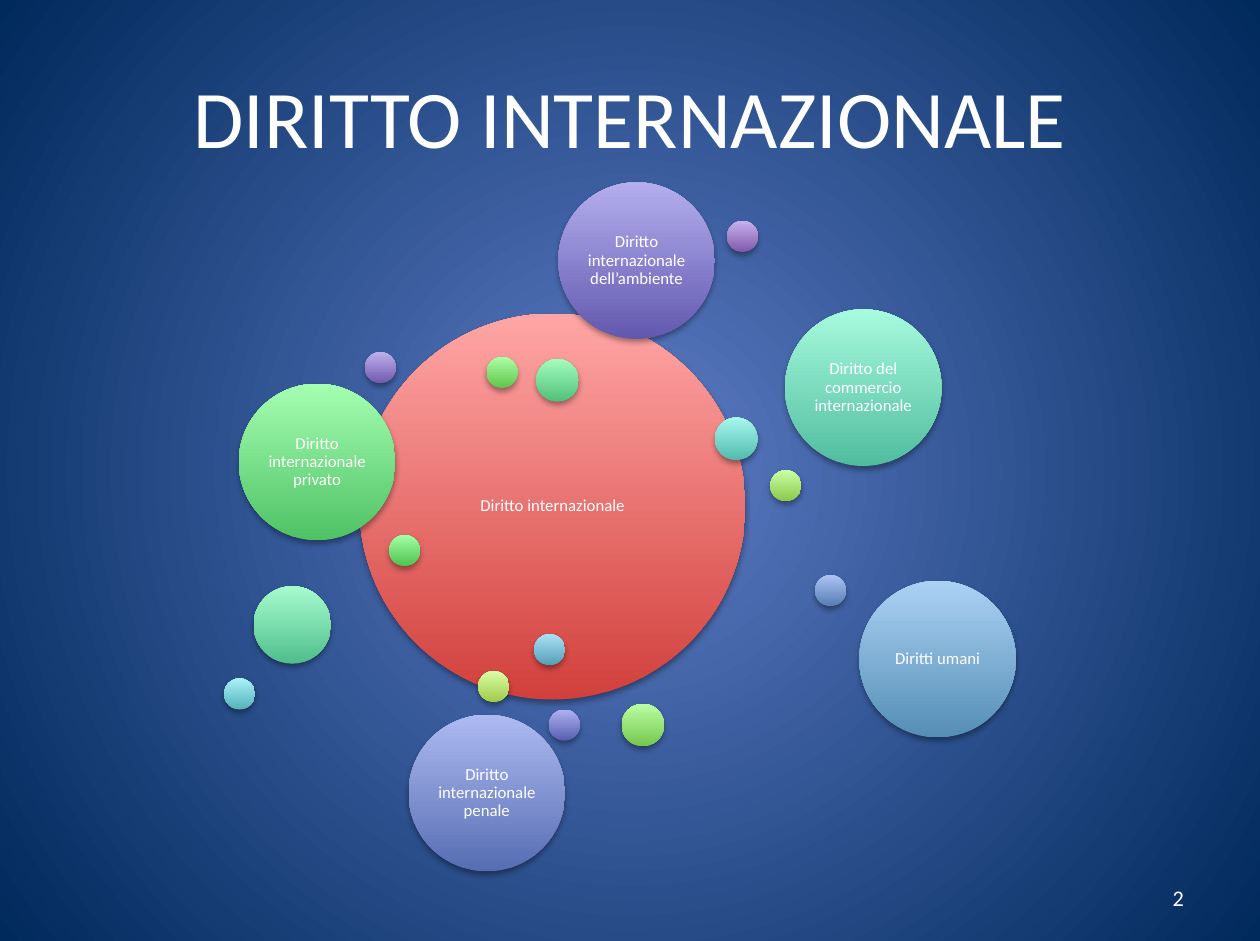
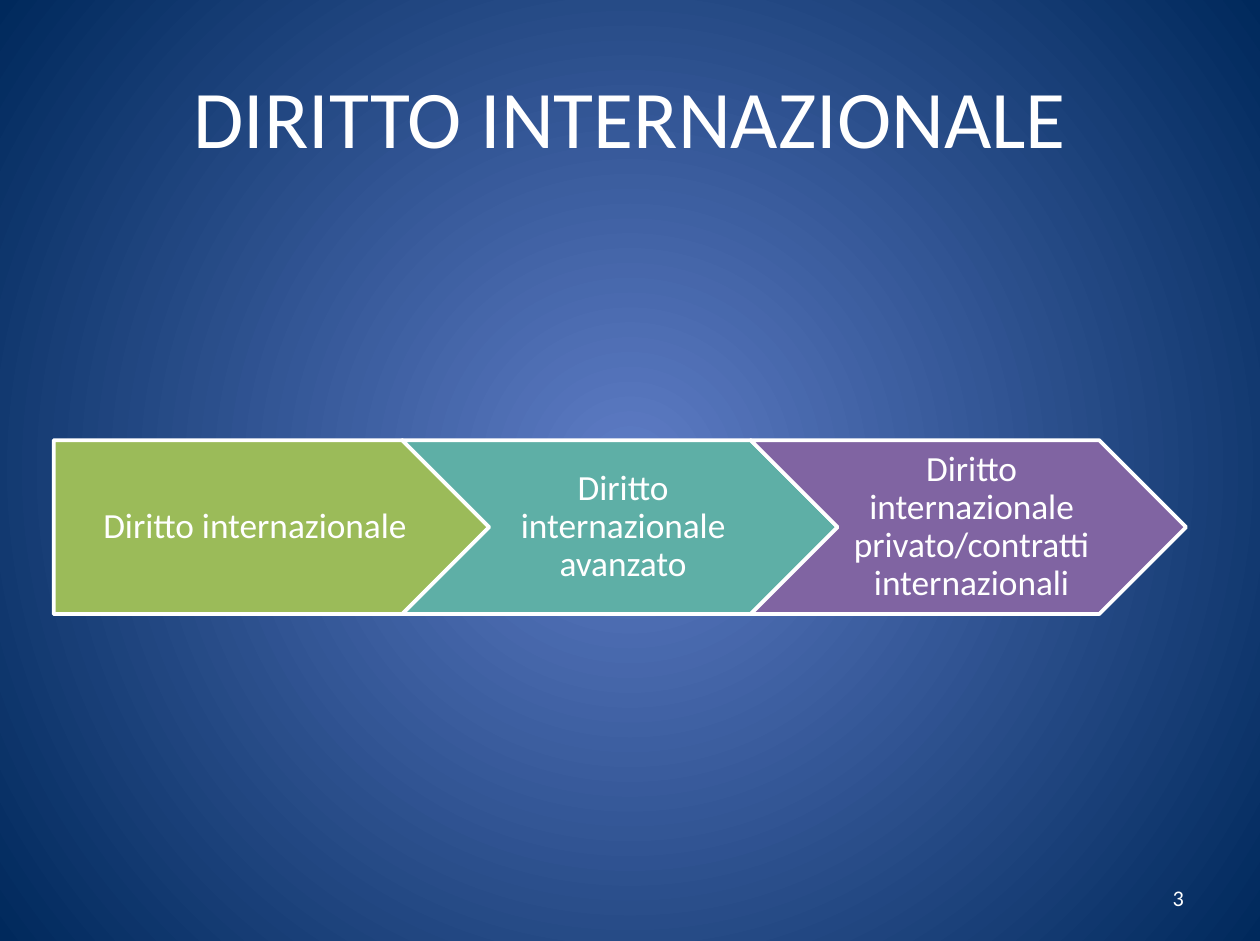
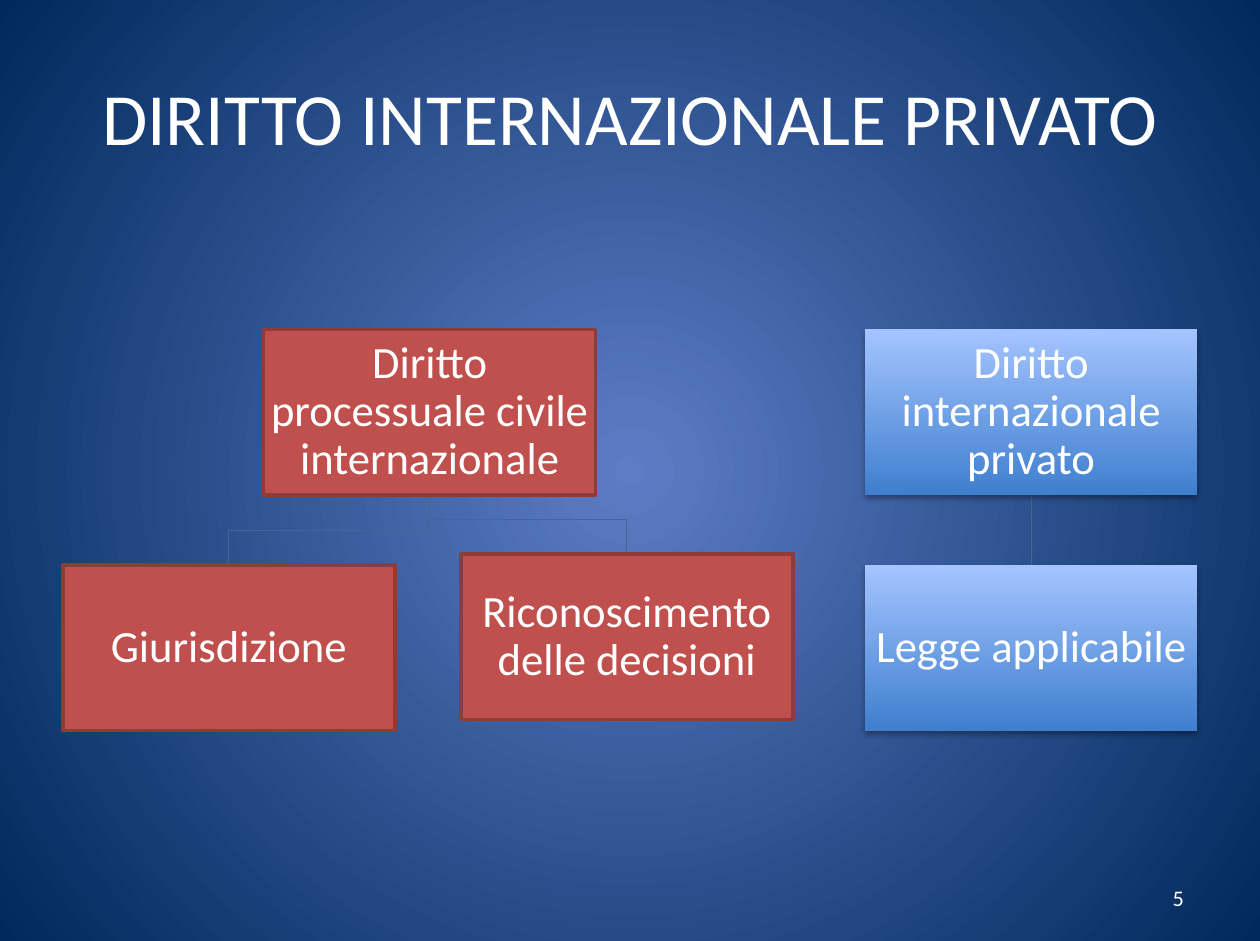
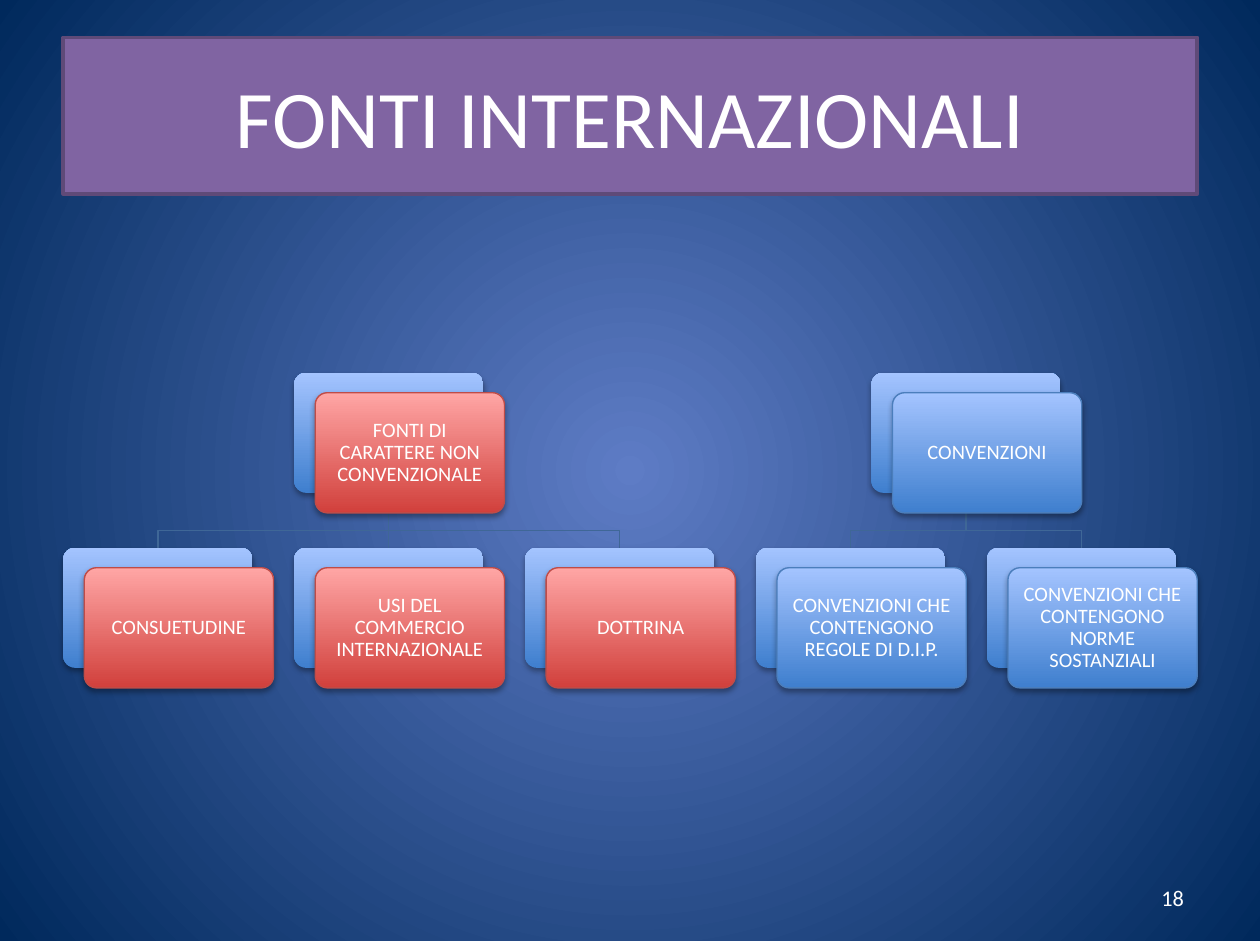
from lxml import etree
from pptx import Presentation
from pptx.dml.color import RGBColor
from pptx.enum.shapes import MSO_CONNECTOR, MSO_SHAPE
from pptx.enum.text import MSO_ANCHOR, MSO_AUTO_SIZE, PP_ALIGN
from pptx.oxml import parse_xml
from pptx.oxml.ns import nsdecls, qn
from pptx.util import Cm, Pt

FONT = "Calibri"
WHITE = RGBColor(0xFF, 0xFF, 0xFF)
GLOW = RGBColor(0x5E, 0x7C, 0xC5)
NAVY = RGBColor(0x00, 0x29, 0x5C)
BRANCH = RGBColor(0x3F, 0x67, 0x97)
GREEN = RGBColor(0x9B, 0xBB, 0x59)
TEAL = RGBColor(0x5E, 0xAF, 0xA6)
PURPLE = RGBColor(0x80, 0x64, 0xA2)
PURPLE_EDGE = RGBColor(0x5F, 0x4A, 0x78)
BRICK = RGBColor(0xC0, 0x50, 0x4D)
BRICK_EDGE = RGBColor(0x8E, 0x3B, 0x39)
RED_EDGE = RGBColor(0xBF, 0x4C, 0x48)
BLUE_EDGE = RGBColor(0x4B, 0x7E, 0xBC)


def gradient(dark, light):
    return RGBColor.from_string(dark), RGBColor.from_string(light)


RED_GRADIENT = gradient("D1403C", "FFA6A5")
BLUE_GRADIENT = gradient("3F7FCE", "A4C4FF")

SMALL, MEDIUM, LARGER, LARGE, MAIN = 0.59, 0.81, 1.47, 2.97, 7.32
# left, top, diameter, colours, label
BUBBLES = [
    (6.82, 5.95, MAIN, RED_GRADIENT, "Diritto internazionale"),
    (9.07, 12.73, SMALL, gradient("A0CA4A", "DAFFA5"), ""),
    (14.61, 8.92, SMALL, gradient("8AC84B", "CAFFA5"), ""),
    (11.79, 13.35, MEDIUM, gradient("74C64C", "BBFFA4"), ""),
    (9.23, 6.77, SMALL, gradient("5FC54D", "ADFFA4"), ""),
    (7.38, 10.15, SMALL, gradient("4EC350", "A4FFA5"), ""),
    (4.53, 7.28, LARGE, gradient("4FC265", "A4FEB1"),
     "Diritto internazionale privato"),
    (10.17, 6.81, MEDIUM, gradient("4FC079", "A5FCBE"), ""),
    (4.81, 11.12, LARGER, gradient("50BE8C", "A6FBCD"), ""),
    (14.89, 5.87, LARGE, gradient("51BD9E", "A7FADD"),
     "Diritto del commercio internazionale"),
    (13.56, 7.92, MEDIUM, gradient("52BBAF", "A8F8ED"), ""),
    (4.25, 12.87, SMALL, gradient("53B3B9", "A9F1F7"), ""),
    (10.13, 12.03, SMALL, gradient("54A0B7", "AAE0F6"), ""),
    (16.3, 11.02, LARGE, gradient("558EB6", "ABD1F4"), "Diritti umani"),
    (15.46, 10.91, SMALL, gradient("567DB4", "ACC4F3"), ""),
    (7.75, 13.56, LARGE, gradient("576DB2", "ADBAF2"),
     "Diritto internazionale penale"),
    (10.41, 13.46, SMALL, gradient("585EB1", "AEB1F1"), ""),
    (10.59, 3.46, LARGE, gradient("6259AF", "B4AEEF"),
     "Diritto internazionale dell’ambiente"),
    (6.92, 6.68, SMALL, gradient("715AAD", "BDAFEE"), ""),
    (13.79, 4.19, SMALL, gradient("7F5BAB", "C8B0ED"), ""),
]


def set_attributes(target, values):
    for name, value in values.items():
        setattr(target, name, value)


def set_gradient(fill, colours):
    fill.gradient()
    for stop, colour in zip(fill.gradient_stops, colours):
        stop.color.rgb = colour


def set_background(master):
    """Give every slide a round glow that darkens towards the corners."""
    set_gradient(master.background.fill, (GLOW, NAVY))
    linear = next(master.element.iter(qn("a:lin")))
    linear.getparent().replace(linear, parse_xml(
        f'<a:path {nsdecls("a")} path="circle"><a:fillToRect l="50000" '
        't="50000" r="50000" b="50000"/></a:path>'))


def set_shadow(shape):
    effects = shape.element.spPr.find(qn("a:effectLst"))
    effects.append(parse_xml(
        f'<a:outerShdw {nsdecls("a")} blurRad="{Pt(3.1)}" dist="{Pt(1.8)}" '
        'dir="5400000" rotWithShape="0"><a:srgbClr val="000000">'
        '<a:alpha val="35000"/></a:srgbClr></a:outerShdw>'))


def set_line(shape, colour, width):
    shape.line.width = Pt(width)
    shape.line.color.rgb = colour


def write_text(shape, text, size, align=PP_ALIGN.CENTER, spacing=0.9, insets=None):
    """Write one white paragraph; insets are left, top, right, bottom in cm."""
    frame = shape.text_frame
    set_attributes(frame, {"word_wrap": True, "auto_size": MSO_AUTO_SIZE.NONE,
                           "vertical_anchor": MSO_ANCHOR.MIDDLE})
    if insets:
        sides = ("left", "top", "right", "bottom")
        set_attributes(frame, {f"margin_{side}": Cm(inset)
                               for side, inset in zip(sides, insets)})
    frame.text = text
    paragraph = frame.paragraphs[0]
    set_attributes(paragraph, {"alignment": align, "line_spacing": spacing})
    font = paragraph.runs[0].font
    set_attributes(font, {"name": FONT, "size": Pt(size)})
    font.color.rgb = WHITE


def add_box(slide, kind, place, fill, edge=None, edge_width=2.0):
    """Add a shape; a pair of colours as fill gives a gradient with a shadow."""
    shape = slide.shapes.add_shape(kind, *map(Cm, place))
    shape.shadow.inherit = False
    if isinstance(fill, RGBColor):
        shape.fill.solid()
        shape.fill.fore_color.rgb = fill
    else:
        set_gradient(shape.fill, fill)
        shape.fill.gradient_angle = 90
        set_shadow(shape)
    if edge is None:
        shape.line.fill.background()
    else:
        set_line(shape, edge, edge_width)
    return shape


def add_branch(slide, start, end, bend_gap):
    """Join parent to child, turning bend_gap above the child."""
    (x1, y1), (x2, y2) = start, end
    if x1 == x2:
        branch = slide.shapes.add_connector(
            MSO_CONNECTOR.STRAIGHT, *map(Cm, (x1, y1, x2, y2)))
        etree.SubElement(branch.element.spPr, qn("a:effectLst"))
    else:
        bend = y2 - bend_gap
        builder = slide.shapes.build_freeform(Cm(x1), Cm(y1))
        builder.add_line_segments(
            [(Cm(x), Cm(y)) for x, y in ((x1, bend), (x2, bend), (x2, y2))],
            close=False)
        branch = builder.convert_to_shape()
        branch.shadow.inherit = False
        branch.fill.background()
    set_line(branch, BRANCH, 0.75)


def add_titled_slide(presentation, title_text, number, title_size=44):
    slide = presentation.slides.add_slide(presentation.slide_layouts[5])
    title = slide.shapes.title
    set_attributes(title, {"left": Cm(1.2), "top": Cm(0.71),
                           "width": Cm(21.51), "height": Cm(2.97)})
    write_text(title, title_text, title_size, spacing=1.0)
    number_box = slide.shapes.add_textbox(Cm(17.12), Cm(16.55), Cm(5.59), Cm(0.94))
    write_text(number_box, str(number), 12, PP_ALIGN.RIGHT, 1.0)
    return slide


def build_bubbles(presentation):
    slide = add_titled_slide(presentation, "DIRITTO INTERNAZIONALE", 2)
    for left, top, diameter, colours, label in BUBBLES:
        bubble = add_box(slide, MSO_SHAPE.OVAL, (left, top, diameter, diameter), colours)
        if label:
            write_text(bubble, label, 9, insets=(0.1,) * 4)


def build_process(presentation):
    slide = add_titled_slide(presentation, "DIRITTO INTERNAZIONALE", 3)
    steps = [
        (MSO_SHAPE.PENTAGON, GREEN, 0.28, "Diritto internazionale"),
        (MSO_SHAPE.CHEVRON, TEAL, 0.2, "Diritto internazionale avanzato"),
        (MSO_SHAPE.CHEVRON, PURPLE, 0.2,
         "Diritto internazionale privato/contratti internazionali"),
    ]
    for index, (kind, colour, left_inset, label) in enumerate(steps):
        step = add_box(slide, kind, (1.02 + index * 6.61, 8.35, 8.26, 3.3), colour, WHITE)
        write_text(step, label, 19, insets=(left_inset, 0.15, 0.08, 0.15))


def build_private_law(presentation):
    slide = add_titled_slide(presentation, "DIRITTO INTERNAZIONALE PRIVATO", 5, 39.6)
    width, height = 6.3, 3.14
    brick, blue = (BRICK, BRICK_EDGE), (BLUE_GRADIENT, None)
    procedure, conflict = (5.0, 6.25), (16.41, 6.25)
    # left, top, colours, label, parent
    boxes = [
        (*procedure, brick, "Diritto processuale civile internazionale", None),
        (1.19, 10.72, brick, "Giurisdizione", procedure),
        (8.74, 10.51, brick, "Riconoscimento delle decisioni", procedure),
        (*conflict, blue, "Diritto internazionale privato", None),
        (16.41, 10.72, blue, "Legge applicabile", conflict),
    ]
    for left, top, _, _, parent in boxes:
        if parent:
            add_branch(slide, (parent[0] + width / 2, parent[1] + height),
                       (left + width / 2, top), 0.66)
    for left, top, (fill, edge), label, _ in boxes:
        box = add_box(slide, MSO_SHAPE.RECTANGLE, (left, top, width, height), fill, edge)
        write_text(box, label, 24, insets=(0.05,) * 4)


def add_card(slide, left, top, size, colours, label):
    """Add a labelled card in front of a shifted blue one."""
    fill, edge = colours
    shift_x, shift_y = 0.4, 0.38
    back = add_box(slide, MSO_SHAPE.ROUNDED_RECTANGLE, (left, top, *size), BLUE_GRADIENT)
    front = add_box(slide, MSO_SHAPE.ROUNDED_RECTANGLE,
                    (left + shift_x, top + shift_y, *size), fill, edge, 0.75)
    for card in (back, front):
        card.adjustments[0] = 0.1
    write_text(front, label, 11, insets=(0.13,) * 4)


def build_sources(presentation):
    slide = add_titled_slide(presentation, "FONTI INTERNAZIONALI", 18)
    title = slide.shapes.title
    title.fill.solid()
    title.fill.fore_color.rgb = PURPLE
    set_line(title, PURPLE_EDGE, 2)

    width, height = size = 3.59, 2.28
    parent_top, child_top = 7.07, 10.39
    red, blue = (RED_GRADIENT, RED_EDGE), (BLUE_GRADIENT, BLUE_EDGE)
    # column and label of the parent, colours, columns and labels of the children
    trees = [
        (1, "FONTI DI CARATTERE NON CONVENZIONALE", red,
         {0: "CONSUETUDINE", 1: "USI DEL COMMERCIO INTERNAZIONALE", 2: "DOTTRINA"}),
        (3.5, "CONVENZIONI", blue,
         {3: "CONVENZIONI CHE CONTENGONO REGOLE DI D.I.P.",
          4: "CONVENZIONI CHE CONTENGONO NORME SOSTANZIALI"}),
    ]

    def column_left(column):
        return 1.2 + column * 4.38

    for column, label, colours, children in trees:
        parent_left = column_left(column)
        for child in children:
            add_branch(slide, (parent_left + width / 2, parent_top + height),
                       (column_left(child) + width / 2, child_top), 0.33)
        add_card(slide, parent_left, parent_top, size, colours, label)
        for child, child_label in children.items():
            add_card(slide, column_left(child), child_top, size, colours, child_label)


def main():
    presentation = Presentation()
    set_attributes(presentation, {"slide_width": Cm(23.9), "slide_height": Cm(17.85)})
    set_background(presentation.slide_master)
    for build in (build_bubbles, build_process, build_private_law, build_sources):
        build(presentation)
    presentation.save("out.pptx")


if __name__ == "__main__":
    main()
